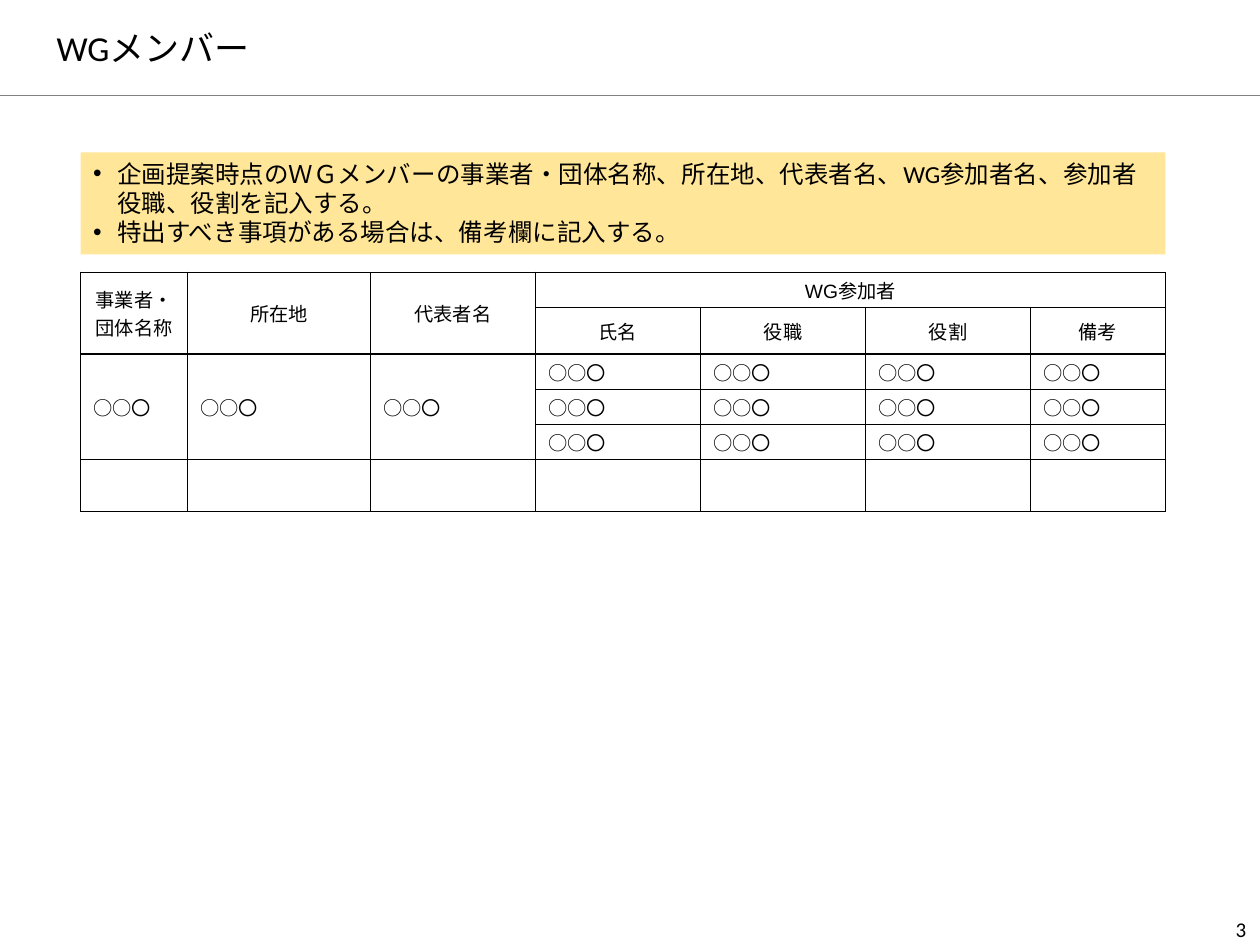
"""Build the working-group member slide."""
from itertools import product
from typing import Any, NamedTuple

from lxml.etree import SubElement
from pptx import Presentation
from pptx.dml.color import RGBColor
from pptx.enum.shapes import MSO_CONNECTOR as Connector, MSO_SHAPE as Shape
from pptx.enum.text import MSO_ANCHOR as Anchor, PP_ALIGN as Align
from pptx.oxml.ns import qn
from pptx.util import Inches, Pt

BLACK = RGBColor(0x00, 0x00, 0x00)
GRAY = RGBColor(0x80, 0x80, 0x80)
YELLOW = RGBColor(0xFF, 0xE6, 0x99)

WIDTH, HEIGHT = Inches(10), Inches(7.5)
LEFT, CONTENT_WIDTH = Inches(0.64), Inches(8.61)
COLUMNS = (0.85, 1.45, 1.31, 1.31, 1.31, 1.31, 1.07)
ROWS = (0.28, 0.37, 0.28, 0.28, 0.28, 0.41)
MEMBER = "○○〇"
BORDER_SIDES = ("a:lnL", "a:lnR", "a:lnT", "a:lnB")
GUIDANCE = (
    "企画提案時点のＷＧメンバーの事業者・団体名称、所在地、代表者名、WG参加者名、参加者役職、役割を記入する。",
    "特出すべき事項がある場合は、備考欄に記入する。",
)


class TextStyle(NamedTuple):
    """Type size, face and placement of a text."""

    size: float
    name: str = "Calibri"
    align: Align = Align.LEFT
    spacing: float = 1.0


class Entry(NamedTuple):
    """Text placed on the table grid, with its spans."""

    row: int
    column: int
    text: str
    row_span: int = 1
    column_span: int = 1


HEADERS = (
    Entry(0, 0, "事業者・団体名称", row_span=2),
    Entry(0, 1, "所在地", row_span=2),
    Entry(0, 2, "代表者名", row_span=2),
    Entry(0, 3, "WG参加者", column_span=4),
    *(Entry(1, 3 + index, text) for index, text in enumerate(("氏名", "役職", "役割", "備考"))),
)
MEMBERS = (
    *(Entry(2, column, MEMBER, row_span=3) for column in range(3)),
    *(Entry(row, column, MEMBER) for row, column in product(range(2, 5), range(3, 7))),
)


def apply_format(target: Any, values: dict[str, Any]) -> None:
    """Set each named attribute on the target."""
    for name, value in values.items():
        setattr(target, name, value)


def write(paragraph: Any, text: str, style: TextStyle) -> None:
    """Write one styled run into a paragraph."""
    apply_format(paragraph, {"alignment": style.align, "line_spacing": style.spacing})
    run = paragraph.add_run()
    run.text = text
    apply_format(run.font, {"size": Pt(style.size), "name": style.name, "bold": False})
    run.font.color.rgb = BLACK


def add_label(slide: Any, box: tuple[float, ...], text: str, style: TextStyle) -> None:
    """Add a middle-anchored text box given in shares of the slide."""
    left, top, width, height = box
    shape = slide.shapes.add_textbox(
        int(left * WIDTH), int(top * HEIGHT), int(width * WIDTH), int(height * HEIGHT)
    )
    apply_format(shape.text_frame, {"word_wrap": True, "vertical_anchor": Anchor.MIDDLE})
    write(shape.text_frame.paragraphs[0], text, style)


def add_rule(slide: Any) -> None:
    """Draw the thin line below the title."""
    top = Inches(0.76)
    rule = slide.shapes.add_connector(Connector.STRAIGHT, 0, top, WIDTH, top)
    rule.line.color.rgb = GRAY
    rule.line.width = Pt(0.5)
    SubElement(rule._element.spPr, qn("a:effectLst"))


def add_guidance(slide: Any) -> None:
    """Add the yellow panel with bulleted instructions."""
    panel = slide.shapes.add_shape(
        Shape.RECTANGLE, LEFT, Inches(1.21), CONTENT_WIDTH, Inches(0.81)
    )
    panel.shadow.inherit = False
    panel.fill.solid()
    panel.fill.fore_color.rgb = YELLOW
    panel.line.fill.background()
    frame = panel.text_frame
    apply_format(frame, {"word_wrap": True, "vertical_anchor": Anchor.TOP})
    for index, text in enumerate(GUIDANCE):
        paragraph = frame.add_paragraph() if index else frame.paragraphs[0]
        write(paragraph, text, TextStyle(14))
        properties = paragraph._p.get_or_add_pPr()
        properties.set("marL", str(Inches(0.19)))
        properties.set("indent", str(-Inches(0.19)))
        SubElement(properties, qn("a:buFont"), typeface="Arial")
        SubElement(properties, qn("a:buChar"), char="•")


def format_cell(cell: Any) -> None:
    """Give a cell black borders, no fill and flat margins."""
    apply_format(cell, {"vertical_anchor": Anchor.MIDDLE, "margin_top": 0, "margin_bottom": 0})
    properties = cell._tc.get_or_add_tcPr()
    for side in BORDER_SIDES:
        border = SubElement(properties, qn(side), w=str(Pt(0.75)))
        fill = SubElement(border, qn("a:solidFill"))
        SubElement(fill, qn("a:srgbClr"), val=str(BLACK))
    cell.fill.background()


def fill_entries(table: Any, entries: tuple[Entry, ...], style: TextStyle, margin: float) -> None:
    """Merge and write the given entries."""
    for entry in entries:
        cell = table.cell(entry.row, entry.column)
        if entry.row_span * entry.column_span > 1:
            last_row = entry.row + entry.row_span - 1
            last_column = entry.column + entry.column_span - 1
            cell.merge(table.cell(last_row, last_column))
        apply_format(cell, {"margin_left": Inches(margin), "margin_right": Inches(margin)})
        write(cell.text_frame.paragraphs[0], entry.text, style)


def add_member_table(slide: Any) -> None:
    """Add the table of members and participants."""
    table = slide.shapes.add_table(
        len(ROWS), len(COLUMNS), LEFT, Inches(2.16), CONTENT_WIDTH, Inches(sum(ROWS))
    ).table
    apply_format(table, {"first_row": False, "horz_banding": False})
    for column, width in zip(table.columns, COLUMNS):
        column.width = Inches(width)
    for row, height in zip(table.rows, ROWS):
        row.height = Inches(height)
    for cell in table.iter_cells():
        format_cell(cell)
    fill_entries(table, HEADERS, TextStyle(11, "Arial", Align.CENTER), 0.07)
    fill_entries(table, MEMBERS, TextStyle(11, "Arial"), 0.1)


def main() -> None:
    """Build and save the presentation."""
    presentation = Presentation()
    apply_format(presentation, {"slide_width": WIDTH, "slide_height": HEIGHT})
    slide = presentation.slides.add_slide(presentation.slide_layouts[6])
    add_rule(slide)
    add_label(slide, (0.774, 0.968, 0.225, 0.03), "3", TextStyle(12, align=Align.RIGHT))
    add_label(slide, (0.035, 0.021, 0.928, 0.064), "WGメンバー", TextStyle(20, spacing=0.9))
    add_guidance(slide)
    add_member_table(slide)
    presentation.save("out.pptx")


if __name__ == "__main__":
    main()
